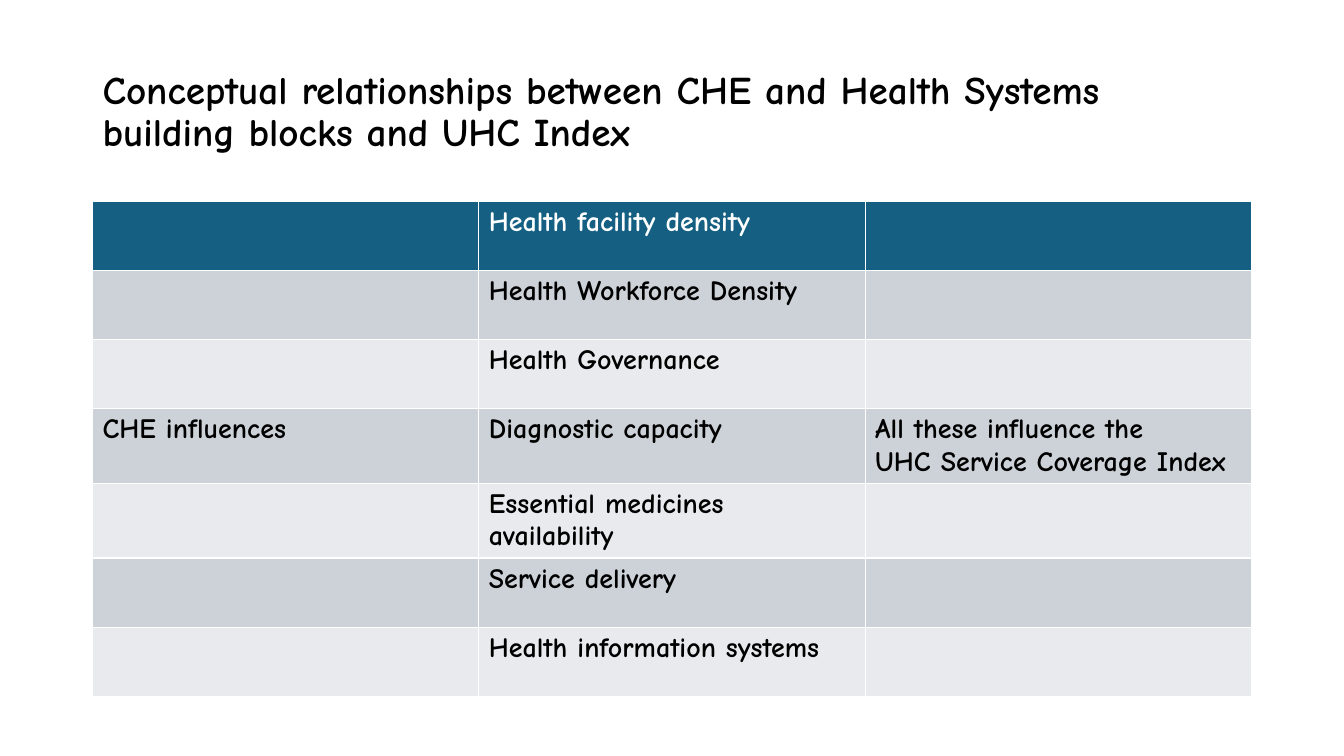
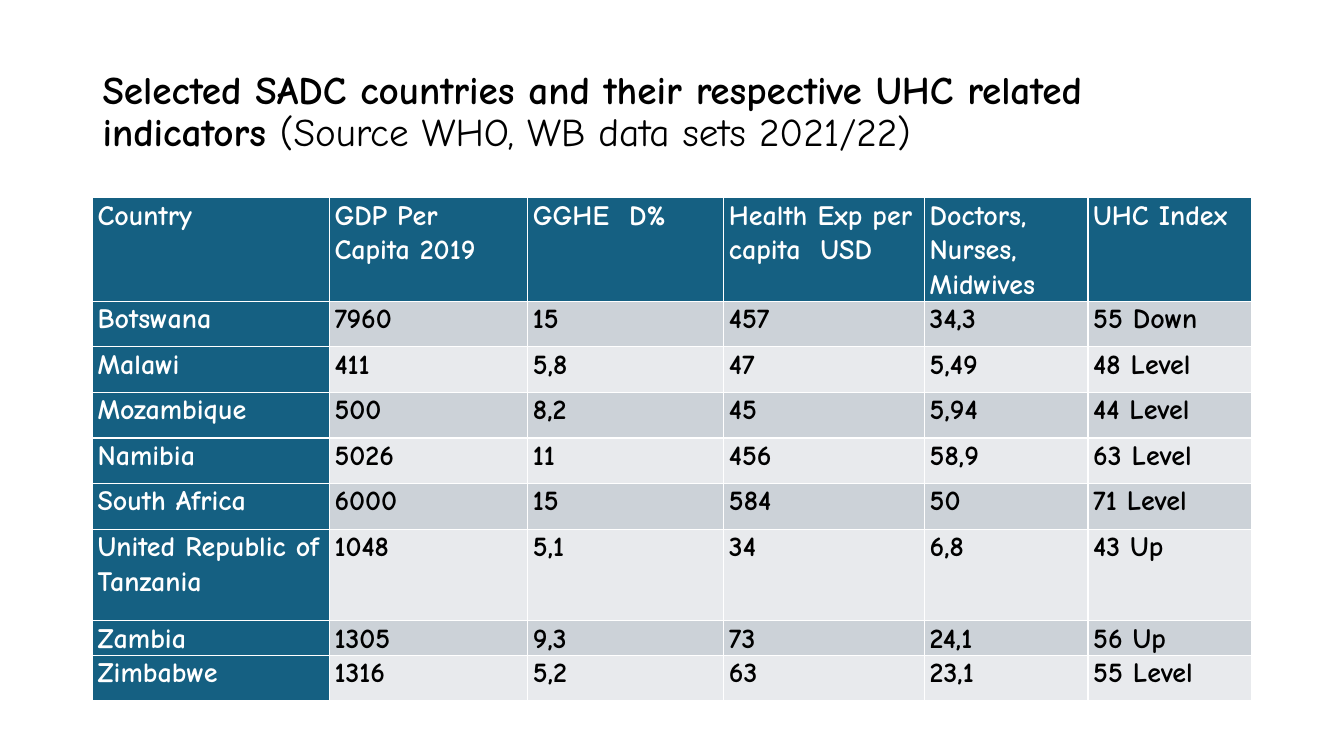
from dataclasses import dataclass

from pptx import Presentation
from pptx.dml.color import RGBColor
from pptx.enum.text import MSO_ANCHOR, MSO_AUTO_SIZE, PP_ALIGN
from pptx.util import Cm, Pt


@dataclass(frozen=True)
class Theme:
    font: str = "Comic Neue"
    title: int = 28
    body: int = 20
    ink: str = "000000"
    white: str = "FFFFFF"
    head: str = "156082"
    bands: tuple = ("CCD2D8", "E8EAED")
    left: float = 2.33
    width: float = 29.21


theme = Theme()


def write(frame, text, size=theme.body, color=theme.ink, bold=True,
          tail="", line=None, after=None):
    """Fill a frame, one paragraph per line; tail is a lighter last run."""
    for i, part in enumerate(text.split("\n")):
        para = frame.add_paragraph() if i else frame.paragraphs[0]
        para.alignment = PP_ALIGN.LEFT
        para.line_spacing = line
        para.space_after = None if after is None else Pt(after)
        runs = [(part, bold)] + ([(tail, False)] if tail else [])
        for words, heavy in runs:
            run = para.add_run()
            run.text = words
            run.font.name = theme.font
            run.font.size = Pt(size)
            run.font.bold = heavy
            run.font.color.rgb = RGBColor.from_string(color)


pages = [
    dict(
        title="Conceptual relationships between CHE and Health Systems "
              "building blocks and UHC Index",
        tail="",
        top=5.08,
        cols=[theme.width / 3] * 3,
        heights=[1.74] * 7,
        side=False,
        inset=None,
        format={},
        rows=[
            ("", "Health facility density", ""),
            ("", "Health Workforce Density", ""),
            ("", "Health Governance", ""),
            ("CHE influences", "Diagnostic capacity",
             "All these influence the\nUHC Service Coverage Index"),
            ("", "Essential medicines availability", ""),
            ("", "Service delivery", ""),
            ("", "Health information systems", ""),
        ],
    ),
    dict(
        title="Selected SADC countries and their respective UHC related "
              "indicators ",
        tail="(Source WHO, WB data sets 2021/22)",
        top=4.98,
        cols=[5.97, 5, 4.94, 5.06, 4.12, 4.12],
        heights=[2.03] + [1.15] * 5 + [2.31, 0.56, 1.15],
        side=True,
        inset=0.13,
        format=dict(line=1.07, after=8),
        rows=[
            ("Country", "GDP Per Capita 2019", "GGHE  D%",
             "Health Exp per capita  USD", "Doctors, Nurses, Midwives",
             "UHC Index"),
            ("Botswana", "7960", "15", "457", "34,3", "55 Down"),
            ("Malawi", "411", "5,8", "47", "5,49", "48 Level"),
            ("Mozambique", "500", "8,2", "45", "5,94", "44 Level"),
            ("Namibia", "5026", "11", "456", "58,9", "63 Level"),
            ("South Africa", "6000", "15", "584", "50", "71 Level"),
            ("United Republic of Tanzania", "1048", "5,1", "34", "6,8",
             "43 Up"),
            ("Zambia", "1305", "9,3", "73", "24,1", "56 Up"),
            ("Zimbabwe", "1316", "5,2", "63", "23,1", "55 Level"),
        ],
    ),
]

deck = Presentation()
deck.slide_width, deck.slide_height = Cm(33.87), Cm(19.05)

for page in pages:
    slide = deck.slides.add_slide(deck.slide_layouts[5])

    # Title
    title = slide.shapes.title
    title.left, title.top = Cm(theme.left), Cm(1.01)
    title.width, title.height = Cm(theme.width), Cm(3.68)
    frame = title.text_frame
    frame.word_wrap = True
    frame.auto_size = MSO_AUTO_SIZE.NONE
    frame.vertical_anchor = MSO_ANCHOR.MIDDLE
    write(frame, page["title"], size=theme.title, tail=page["tail"], line=0.9)

    # Table grid
    rows, cols, heights = page["rows"], page["cols"], page["heights"]
    table = slide.shapes.add_table(
        len(rows), len(cols), Cm(theme.left), Cm(page["top"]),
        Cm(theme.width), Cm(sum(heights))).table
    table.first_col = page["side"]
    for col, width in zip(table.columns, cols):
        col.width = Cm(width)
    for row, height in zip(table.rows, heights):
        row.height = Cm(height)

    # Cells: dark heads, banded body
    for r, row in enumerate(rows):
        for c, text in enumerate(row):
            cell = table.cell(r, c)
            head = r == 0 or (page["side"] and c == 0)
            fill = theme.head if head else theme.bands[(r - 1) % 2]
            cell.fill.solid()
            cell.fill.fore_color.rgb = RGBColor.from_string(fill)
            if page["inset"] is not None:
                cell.margin_left = cell.margin_right = Cm(page["inset"])
                cell.margin_top = cell.margin_bottom = 0
            if text:
                write(cell.text_frame, text,
                      color=theme.white if head else theme.ink,
                      **page["format"])

deck.save("out.pptx")
